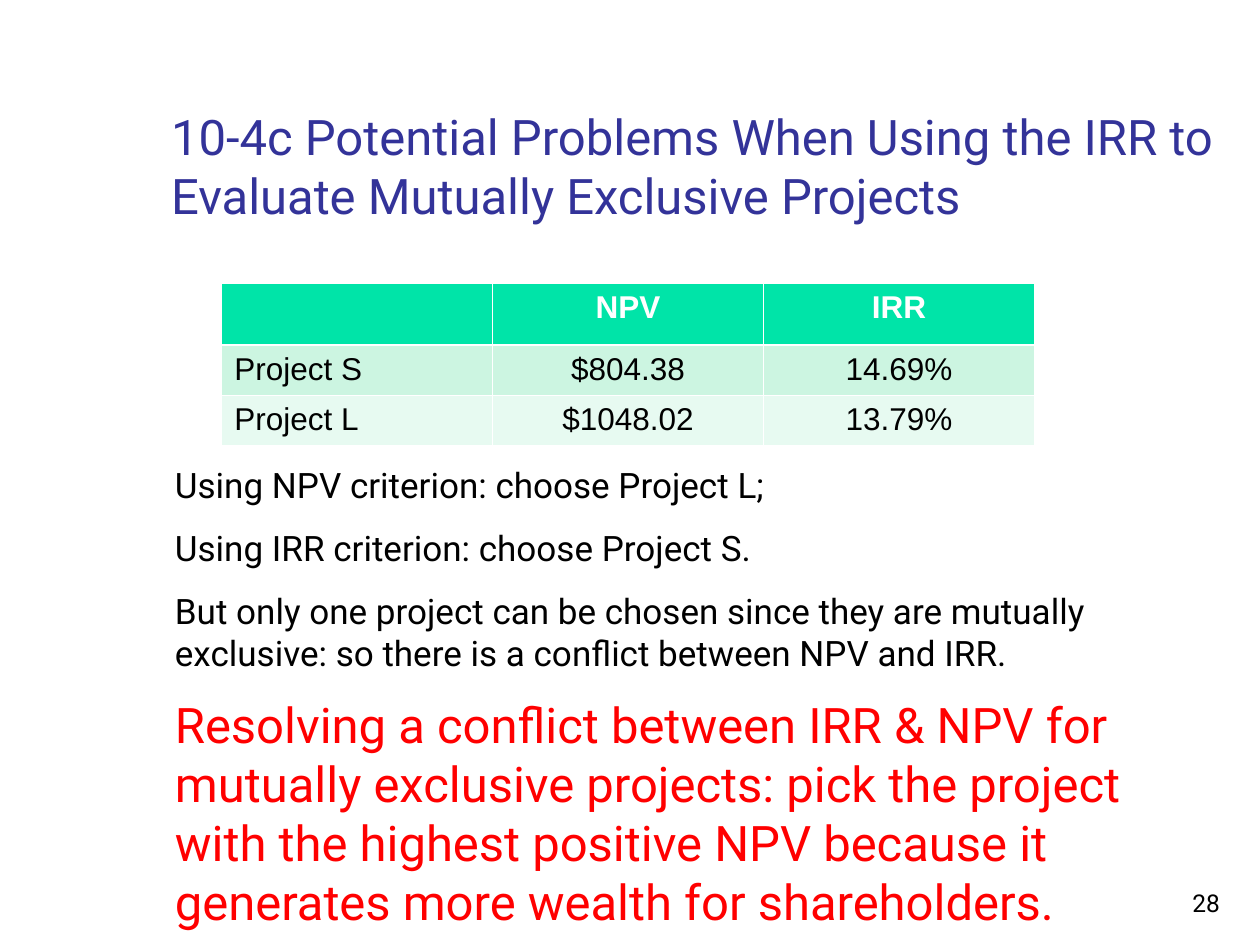
"""Build the slide on NPV and IRR conflicts between mutually exclusive projects."""
from pptx import Presentation
from pptx import util as u
from pptx.dml.color import RGBColor
from pptx.enum import text

deck = Presentation()
deck.slide_width, deck.slide_height = u.Inches(10), u.Inches(7.5)
slide = deck.slides.add_slide(deck.slide_layouts[6])
column, row = deck.slide_width / 100, deck.slide_height / 75


def place(left, top, width, height):
    return [int(n) for n in (left * column, top * row, width * column, height * row)]


def style(paragraph, size, color, face="Roboto", bold=False):
    for run in paragraph.runs:
        run.font.size, run.font.name, run.font.bold = u.Pt(size), face, bold
        run.font.color.rgb = RGBColor.from_string(color)


heading = "10-4c Potential Problems When Using the IRR to Evaluate Mutually Exclusive Projects"
criteria = [
    ("Using NPV criterion: choose Project L;", 20, "000000"),
    ("Using IRR criterion: choose Project S.", 20, "000000"),
    ("But only one project can be chosen since they are mutually exclusive: "
     "so there is a conflict between NPV and IRR.", 20, "000000"),
    ("Resolving a conflict between IRR & NPV for mutually exclusive projects: "
     "pick the project with the highest positive NPV because it generates "
     "more wealth for shareholders.", 28, "FF0000"),
]
left, top, bottom = text.PP_ALIGN.LEFT, text.MSO_ANCHOR.TOP, text.MSO_ANCHOR.BOTTOM
blocks = [
    ((77, 68.3, 20.8, 5), bottom, text.PP_ALIGN.RIGHT, [("28", 14, "000000")]),
    ((12.6, 2.3, 85.2, 16), bottom, left, [(heading, 28, "333399")]),
    ((12.9, 36.3, 85, 30.8), top, left, criteria),
]
for area, anchor, align, lines in blocks:
    frame = slide.shapes.add_textbox(*place(*area)).text_frame
    frame.word_wrap, frame.vertical_anchor = True, anchor
    frame.text = "\n".join(words for words, size, color in lines)
    for paragraph, (words, size, color) in zip(frame.paragraphs, lines):
        paragraph.alignment = align
        paragraph.space_after = u.Pt(12 if lines is criteria else 0)
        style(paragraph, size, color)

projects = [
    ("", "NPV", "IRR"),
    ("Project S", "$804.38", "14.69%"),
    ("Project L", "$1048.02", "13.79%"),
]
row_looks = [(4.9, "00E4A8", "FFFFFF"), (3.8, "CCF5E1", "000000"), (3.8, "E7FAF1", "000000")]
results = slide.shapes.add_table(3, 3, *place(17.6, 22.5, 64.5, 12.5)).table
for r, (values, (height, fill, color)) in enumerate(zip(projects, row_looks)):
    results.rows[r].height = int(height * row)
    for c, value in enumerate(values):
        cell = results.cell(r, c)
        cell.fill.solid()
        cell.fill.fore_color.rgb = RGBColor.from_string(fill)
        cell.text_frame.text = value
        paragraph = cell.text_frame.paragraphs[0]
        paragraph.alignment = text.PP_ALIGN.CENTER if c else left
        style(paragraph, 18, color, "Arial", r == 0)

deck.save("out.pptx")
